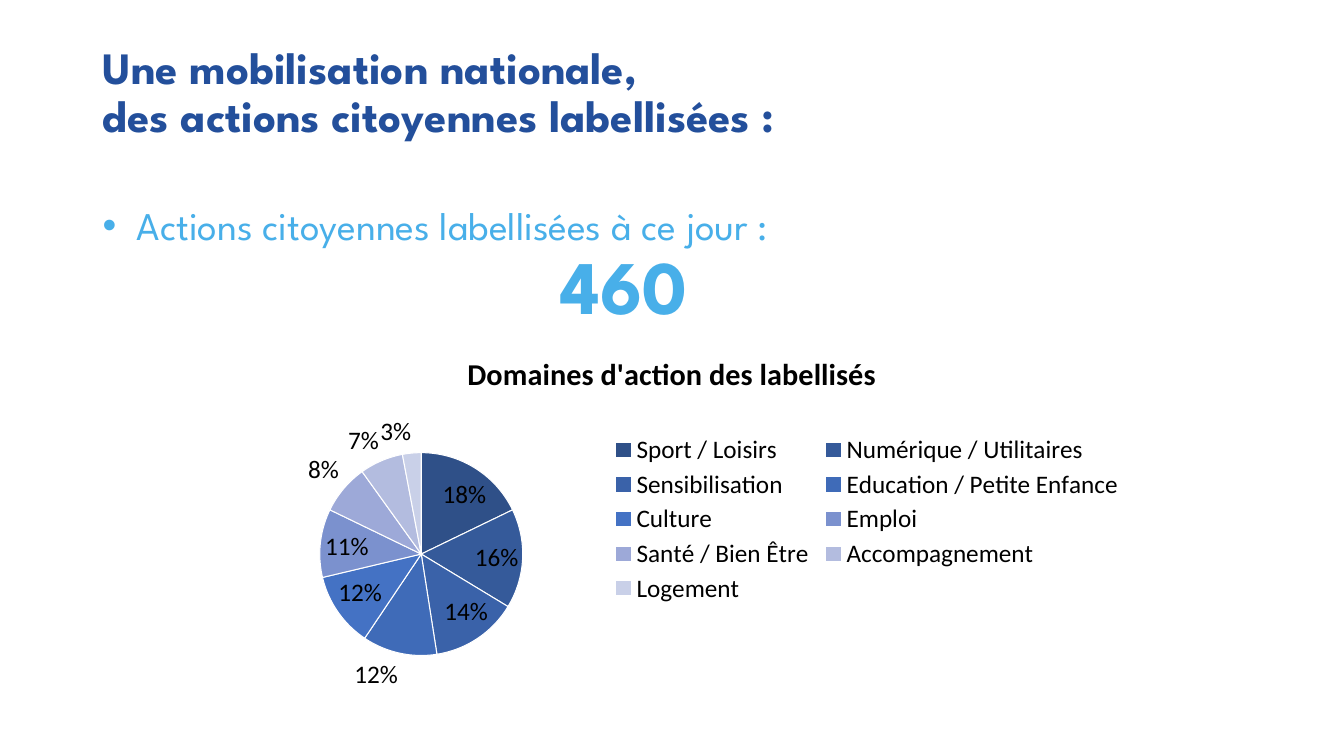
from collections import namedtuple
from dataclasses import dataclass

from lxml import etree
from pptx import Presentation
from pptx import util as u
from pptx.chart import data as chart_data
from pptx.dml.color import RGBColor
from pptx.enum import chart as charts, text
from pptx.oxml import ns

Box = namedtuple("Box", "left top width height")


@dataclass(frozen=True)
class Theme:
    navy: str = "234F9B"
    sky: str = "48AFE9"
    black: str = "000000"
    white: str = "FFFFFF"
    slices: tuple = ("2F5088", "355A9A", "3A62A9", "3F6BB8", "4472C4",
                     "7B91CE", "9DA9D8", "B3BCDF", "C9D0E8")
    heading_font: str = "League Spartan"
    chart_font: str = "Calibri"
    title_size: float = 32
    body_size: float = 28
    figure_size: float = 54
    chart_title_size: float = 21.6
    chart_size: float = 18


THEME = Theme()

DOMAINS = {
    "Sport / Loisirs": 0.18,
    "Numérique / Utilitaires": 0.16,
    "Sensibilisation": 0.14,
    "Education / Petite Enfance": 0.12,
    "Culture": 0.12,
    "Emploi": 0.11,
    "Santé / Bien Être": 0.08,
    "Accompagnement": 0.07,
    "Logement": 0.03,
}


def format_font(font, name, size, color, bold=False):
    values = {"name": name, "size": u.Pt(size), "bold": bold}
    for key, value in values.items():
        setattr(font, key, value)
    font.color.rgb = RGBColor.from_string(color)


def add_text_frame(page, box):
    frame = page.shapes.add_textbox(*map(u.Inches, box)).text_frame
    values = {"word_wrap": True, "auto_size": text.MSO_AUTO_SIZE.NONE,
              "vertical_anchor": text.MSO_ANCHOR.TOP}
    for key, value in values.items():
        setattr(frame, key, value)
    return frame


def write_paragraph(para, words, size, color, bold=False):
    para.line_spacing = 0.9
    para.text = words
    for span in para.runs:
        format_font(span.font, THEME.heading_font, size, color, bold)


def indent_paragraph(para, left, first=0):
    props = para._p.get_or_add_pPr()
    props.set("marL", str(u.Inches(left)))
    props.set("indent", str(u.Inches(first)))
    return props


def add_bullet(para, color, hang):
    props = indent_paragraph(para, hang, -hang)
    bullet_color = etree.SubElement(props, ns.qn("a:buClr"))
    etree.SubElement(bullet_color, ns.qn("a:srgbClr"), val=color)
    etree.SubElement(props, ns.qn("a:buFont"), typeface="Arial")
    etree.SubElement(props, ns.qn("a:buChar"), char="•")


def add_title(page, box):
    para = add_text_frame(page, box).paragraphs[0]
    words = "Une mobilisation nationale,\vdes actions citoyennes labellisées :"
    write_paragraph(para, words, THEME.title_size, THEME.navy, True)


def add_key_figure(page, box):
    frame = add_text_frame(page, box)
    caption = frame.paragraphs[0]
    write_paragraph(caption, "Actions citoyennes labellisées à ce jour :",
                    THEME.body_size, THEME.sky)
    add_bullet(caption, THEME.sky, 0.34)
    figure = frame.add_paragraph()
    write_paragraph(figure, "460", THEME.figure_size, THEME.sky, True)
    indent_paragraph(figure, 4.54)


def set_layout(parent, index, area, inner=False):
    for old in parent.findall(ns.qn("c:layout")):
        parent.remove(old)
    layout = etree.Element(ns.qn("c:layout"))
    manual = etree.SubElement(layout, ns.qn("c:manualLayout"))
    settings = {"layoutTarget": "inner"} if inner else {}
    settings.update(xMode="edge", yMode="edge")
    settings.update(zip("xywh", area))
    for tag, value in settings.items():
        etree.SubElement(manual, ns.qn(f"c:{tag}"), val=str(value))
    parent.insert(index, layout)


def add_domain_chart(page, box):
    values = chart_data.CategoryChartData(number_format="0%")
    values.categories = list(DOMAINS)
    values.add_series("Series 1", list(DOMAINS.values()))
    chart = page.shapes.add_chart(
        charts.XL_CHART_TYPE.PIE, *map(u.Inches, box), values).chart
    format_font(chart.font, THEME.chart_font, THEME.chart_size, THEME.black)

    chart.has_title = True
    heading = chart.chart_title.text_frame
    heading.text = "Domaines d'action des labellisés"
    format_font(heading.paragraphs[0].runs[0].font, THEME.chart_font,
                THEME.chart_title_size, THEME.black, True)

    chart.has_legend = True
    legend = chart.legend
    legend.position = charts.XL_LEGEND_POSITION.RIGHT
    legend.include_in_layout = False
    format_font(legend.font, THEME.chart_font, THEME.chart_size, THEME.black)
    set_layout(legend._element, 1, Box(0.43, 0.26, 0.56, 0.48))

    plot = chart.plots[0]
    plot.vary_by_categories = True
    plot.has_data_labels = True
    labels = plot.data_labels
    settings = {"show_value": True, "show_percentage": False,
                "number_format": "0%", "number_format_is_linked": False,
                "position": charts.XL_LABEL_POSITION.BEST_FIT}
    for key, value in settings.items():
        setattr(labels, key, value)
    format_font(labels.font, THEME.chart_font, THEME.chart_size, THEME.black)
    for index, color in enumerate(THEME.slices):
        style = plot.series[0].points[index].format
        style.fill.solid()
        style.fill.fore_color.rgb = RGBColor.from_string(color)
        style.line.color.rgb = RGBColor.from_string(THEME.white)
        style.line.width = u.Pt(0.75)
    plot_area = chart._chartSpace.find(".//" + ns.qn("c:plotArea"))
    set_layout(plot_area, 0, Box(0.12, 0.32, 0.22, 0.55), inner=True)


def main():
    deck = Presentation()
    deck.slide_width, deck.slide_height = u.Inches(13.33), u.Inches(7.5)
    page = deck.slides.add_slide(deck.slide_layouts[6])
    add_title(page, Box(0.92, 0.4, 11.5, 1.45))
    add_key_figure(page, Box(0.92, 2, 11.5, 1.68))
    add_domain_chart(page, Box(2.06, 3.32, 9.21, 3.66))
    deck.save("out.pptx")


if __name__ == "__main__":
    main()
